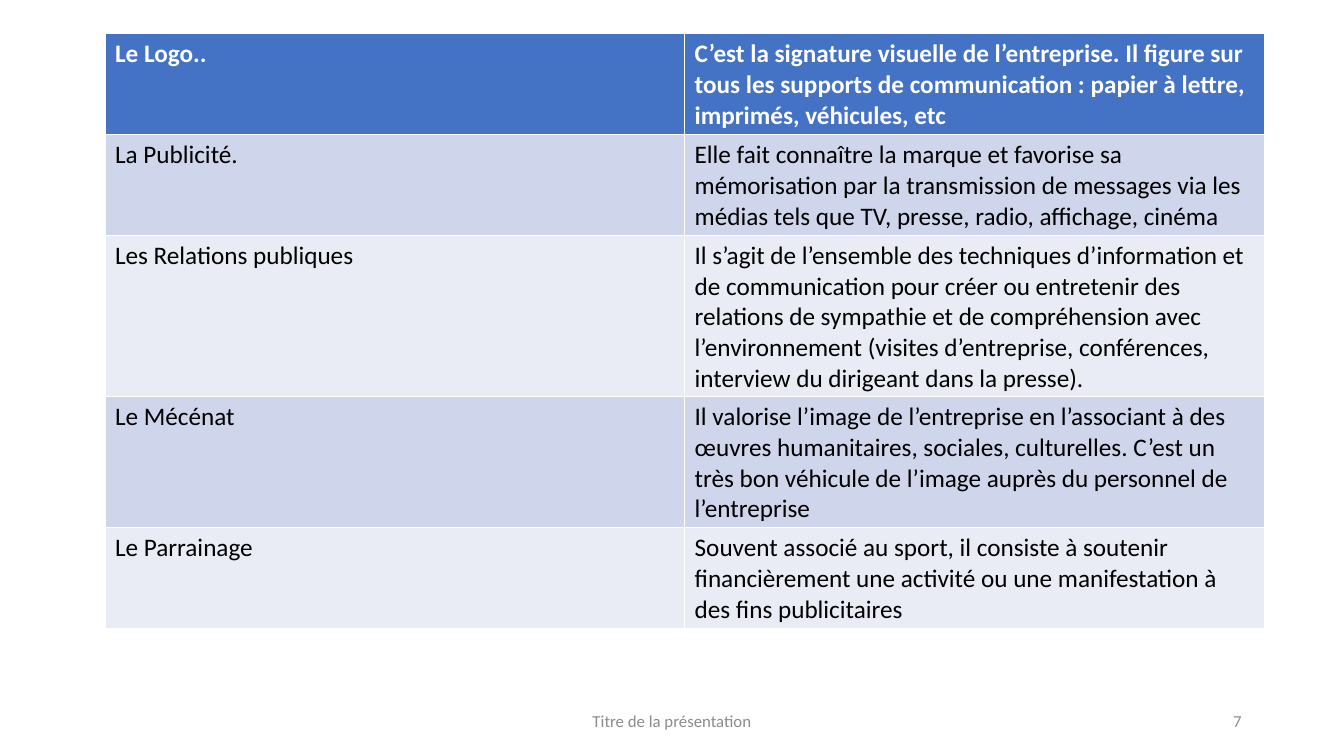
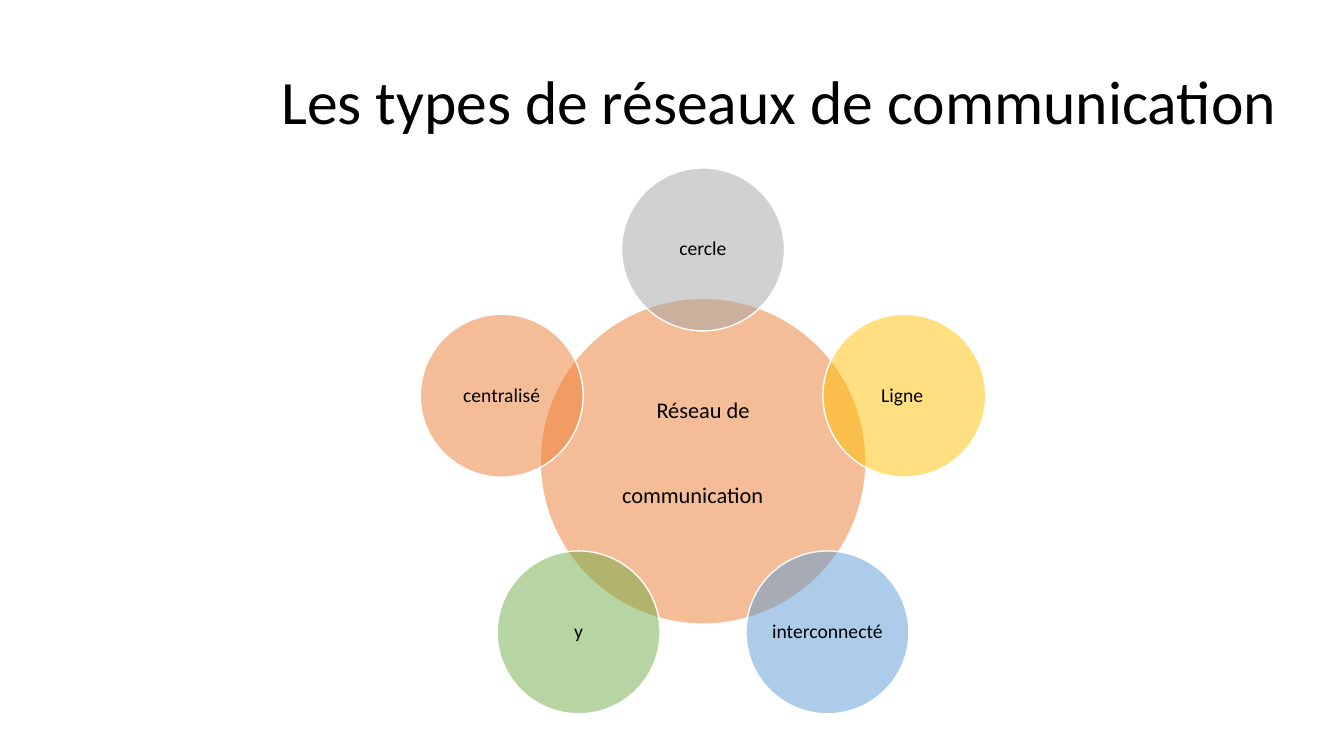
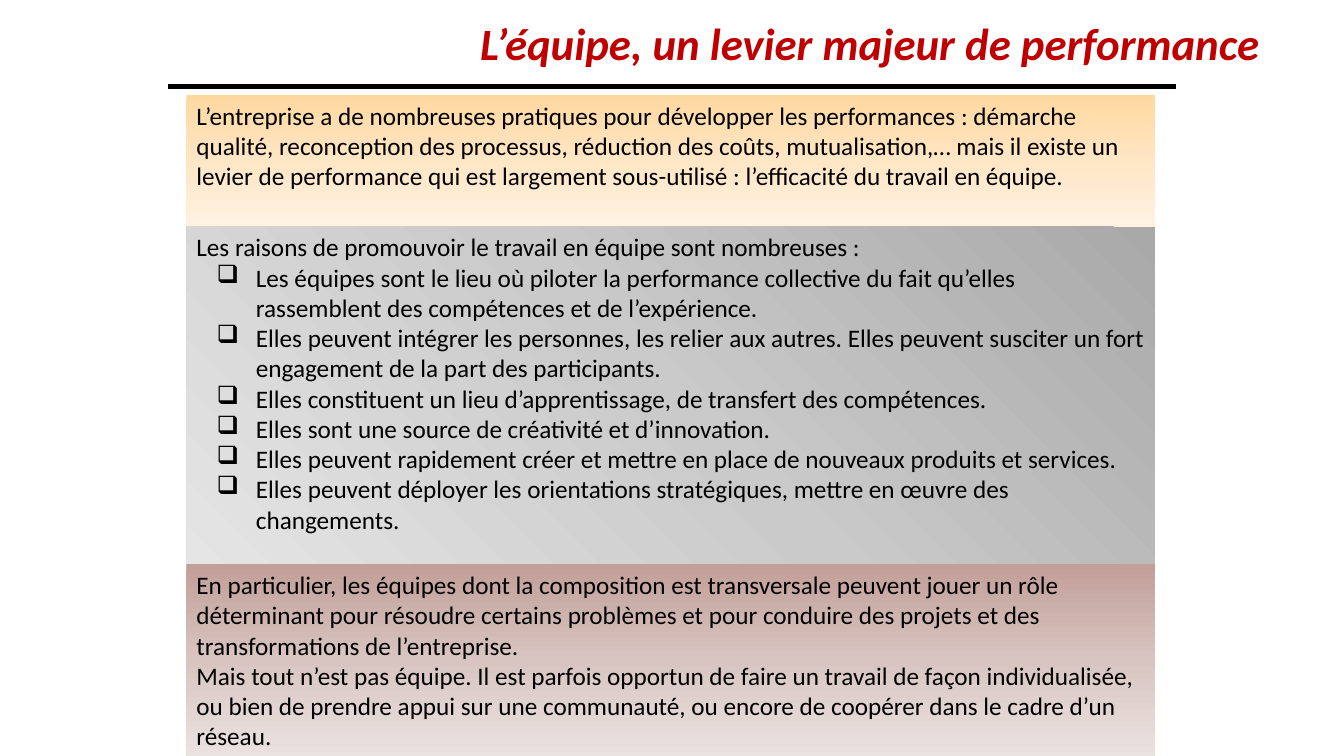
from copy import deepcopy
from math import cos, radians, sin

from lxml.etree import SubElement
from pptx import Presentation
from pptx.dml.color import RGBColor
from pptx.enum.shapes import MSO_CONNECTOR, MSO_SHAPE
from pptx.enum.text import MSO_ANCHOR as Anchor, PP_ALIGN as Align
from pptx.oxml.ns import qn
from pptx.util import Emu, Inches, Pt

FONT = "Calibri"
BLACK, WHITE, GREY, RED = "000000", "FFFFFF", "8C8C8C", "C00000"
HEADER, BANDS = "4472C4", ("E9EBF5", "CFD5EA")
CELL = Inches(1) / 12
paint = RGBColor.from_string


def place(*cells):
    return [Emu(round(CELL * count)) for count in cells]


def write(frame, lines, size, colour=BLACK, align=Align.LEFT, anchor=Anchor.TOP, bold=False):
    frame.word_wrap = True
    frame.vertical_anchor = anchor
    frame.text = "\n".join(lines)
    for para in frame.paragraphs:
        para.alignment = align
        for span in para.runs:
            span.font.name = FONT
            span.font.size = Pt(size)
            span.font.bold = bold
            span.font.color.rgb = paint(colour)


deck = Presentation()
deck.slide_width, deck.slide_height = place(160, 90)
media_page, network_page, team_page = [
    deck.slides.add_slide(deck.slide_layouts[6]) for _ in range(3)
]

labels = [
    (media_page, "Titre de la présentation", (53, 83.4, 54, 4.8), 12, GREY, Align.CENTER, Anchor.MIDDLE),
    (media_page, "7", (113, 83.4, 36, 4.8), 12, GREY, Align.RIGHT, Anchor.MIDDLE),
    (network_page, "Les types de réseaux de communication", (32.3, 4, 124.5, 16.8), 44, BLACK, Align.LEFT, Anchor.MIDDLE),
    (team_page, "L’équipe, un levier majeur de performance", (31.2, 1.3, 120, 7.8), 32, RED, Align.RIGHT, Anchor.TOP),
]
for page, text, area, size, colour, align, anchor in labels:
    box = page.shapes.add_textbox(*place(*area))
    write(box.text_frame, [text], size, colour, align, anchor)
    if page is network_page:
        box.text_frame.paragraphs[0].line_spacing = 0.9
    if page is team_page:
        heading_font = box.text_frame.paragraphs[0].runs[0].font
        heading_font.bold = heading_font.italic = True

media = [
    ("Le Logo..", "C’est la signature visuelle de l’entreprise. Il figure sur tous les supports de communication : papier à lettre, imprimés, véhicules, etc"),
    ("La Publicité.", "Elle fait connaître la marque et favorise sa mémorisation par la transmission de messages via les médias tels que TV, presse, radio, affichage, cinéma"),
    ("Les Relations publiques", "Il s’agit de l’ensemble des techniques d’information et de communication pour créer ou entretenir des relations de sympathie et de compréhension avec l’environnement (visites d’entreprise, conférences, interview du dirigeant dans la presse)."),
    ("Le Mécénat", "Il valorise l’image de l’entreprise en l’associant à des œuvres humanitaires, sociales, culturelles. C’est un très bon véhicule de l’image auprès du personnel de l’entreprise"),
    ("Le Parrainage", "Souvent associé au sport, il consiste à soutenir financièrement une activité ou une manifestation à des fins publicitaires"),
]
table = media_page.shapes.add_table(len(media), 2, *place(12.5, 4, 138, 25)).table
for row, texts in enumerate(media):
    table.rows[row].height = place(5)[0]
    for column, text in enumerate(texts):
        cell = table.cell(row, column)
        cell.fill.solid()
        cell.fill.fore_color.rgb = paint(BANDS[row % 2] if row else HEADER)
        write(cell.text_frame, [text], 18, BLACK if row else WHITE, bold=row == 0)

HUB_X, HUB_Y, HUB_RADIUS = 83.7, 54.9, 19.4
ORBIT, RADIUS = 25.2, 9.7
circles = [("Réseau de communication", "ED7D31", HUB_X, HUB_Y, HUB_RADIUS, 16)]
networks = [
    ("cercle", "A5A5A5"),
    ("Ligne ", "FFC000"),
    ("interconnecté", "5B9BD5"),
    ("y", "70AD47"),
    ("centralisé", "ED7D31"),
]
for index, (name, colour) in enumerate(networks):
    angle = radians(360 / len(networks) * index - 90)
    circles.append((name, colour, HUB_X + ORBIT * cos(angle), HUB_Y + ORBIT * sin(angle), RADIUS, 14))
for name, colour, x, y, radius, size in circles:
    circle = network_page.shapes.add_shape(
        MSO_SHAPE.OVAL, *place(x - radius, y - radius, 2 * radius, 2 * radius)
    )
    circle.shadow.inherit = False
    circle.fill.solid()
    circle.fill.fore_color.rgb = paint(colour)
    tint = circle.fill._xPr.find(qn("a:solidFill"))[0]
    SubElement(tint, qn("a:alpha"), val="50000")
    circle.line.color.rgb = paint(WHITE)
    circle.line.width = Pt(1)
    frame = circle.text_frame
    frame.margin_left = frame.margin_right = frame.margin_top = frame.margin_bottom = Inches(0.02)
    write(frame, [name], size, align=Align.CENTER, anchor=Anchor.MIDDLE)
    para = frame.paragraphs[0]
    para.line_spacing = 0.9
    if radius == HUB_RADIUS:
        spacer = para.add_run()
        spacer.text = " "
        spacer.font.name = FONT
        spacer.font.size = Pt(66)

rule = team_page.shapes.add_connector(MSO_CONNECTOR.STRAIGHT, *place(20, 10.3, 140, 10.3))
rule.line.color.rgb = paint(BLACK)
rule.line.width = Pt(3)
SubElement(rule._element.spPr, qn("a:effectLst"))

panels = [
    (11.3, 15.7, 90, ("FFD8A0", "FFE6C5", "FFF2E3"), [
        "L’entreprise a de nombreuses pratiques pour développer les performances : démarche qualité, reconception des processus, réduction des coûts, mutualisation,… mais il existe un levier de performance qui est largement sous-utilisé : l’efficacité du travail en équipe.",
    ], []),
    (27, 41.2, 135, ("A9A9A9", "CACACA", "E5E5E5"), [
        "Les raisons de promouvoir le travail en équipe sont nombreuses :",
    ], [
        "Les équipes sont le lieu où piloter la performance collective du fait qu’elles rassemblent des compétences et de l’expérience.",
        "Elles peuvent intégrer les personnes, les relier aux autres. Elles peuvent susciter un fort engagement de la part des participants.",
        "Elles constituent un lieu d’apprentissage, de transfert des compétences.",
        "Elles sont une source de créativité et d’innovation.",
        "Elles peuvent rapidement créer et mettre en place de nouveaux produits et services.",
        "Elles peuvent déployer les orientations stratégiques, mettre en œuvre des changements.",
    ]),
    (67.2, 23, 90, ("C29F98", "D8C5C1", "EBE3E1"), [
        "En particulier, les équipes dont la composition est transversale peuvent jouer un rôle déterminant pour résoudre certains problèmes et pour conduire des projets et des transformations de l’entreprise.",
        "Mais tout n’est pas équipe. Il est parfois opportun de faire un travail de façon individualisée, ou bien de prendre appui sur une communauté, ou encore de coopérer dans le cadre d’un réseau.",
    ], []),
]
for top, height, angle, colours, lines, reasons in panels:
    panel = team_page.shapes.add_shape(MSO_SHAPE.RECTANGLE, *place(22.2, top, 115.3, height))
    panel.shadow.inherit = False
    panel.line.fill.background()
    panel.fill.gradient()
    panel.fill.gradient_angle = 360 - angle
    stop_list = panel.fill._xPr.find(qn("a:gradFill")).find(qn("a:gsLst"))
    stop_list.insert(1, deepcopy(stop_list[0]))
    for index, (stop, colour) in enumerate(zip(panel.fill.gradient_stops, colours)):
        stop.position = index / 2
        stop.color.rgb = paint(colour)
    write(panel.text_frame, lines + reasons, 18)
    for para in panel.text_frame.paragraphs[len(lines):]:
        properties = para._p.get_or_add_pPr()
        properties.set("marL", str(Inches(0.59)))
        properties.set("indent", str(-Inches(0.39)))
        SubElement(properties, qn("a:buChar"), char="❑")

deck.save("out.pptx")
